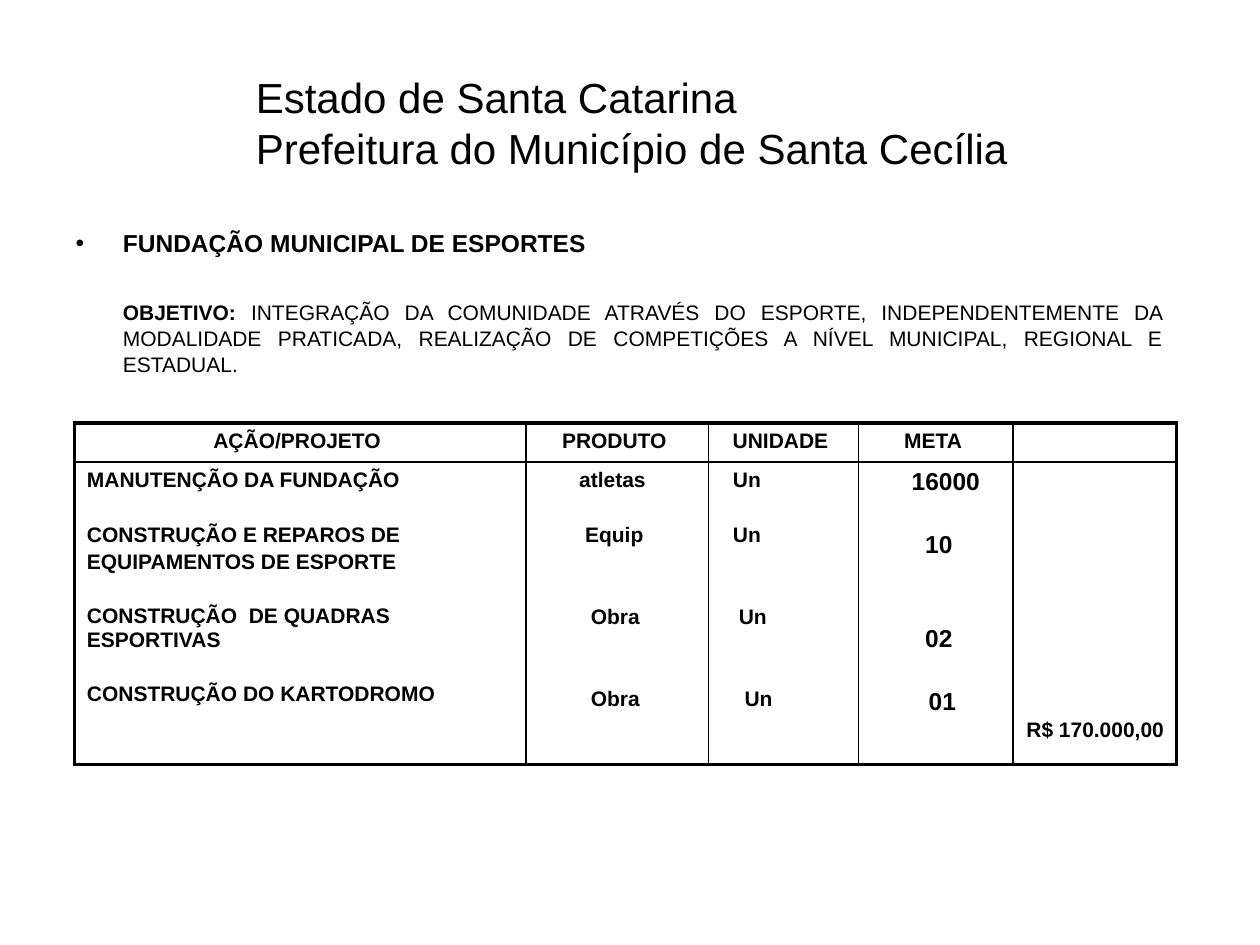
from lxml import etree
from pptx import Presentation
from pptx.dml.color import RGBColor
from pptx.enum.text import MSO_ANCHOR, MSO_AUTO_SIZE, PP_ALIGN
from pptx.oxml.ns import qn
from pptx.util import Pt

LEFT, CENTER, RIGHT, JUSTIFY = PP_ALIGN.LEFT, PP_ALIGN.CENTER, PP_ALIGN.RIGHT, PP_ALIGN.JUSTIFY
TOP, BOTTOM = MSO_ANCHOR.TOP, MSO_ANCHOR.BOTTOM
NO_FIT = MSO_AUTO_SIZE.NONE

THEME = {
    "font": "Arial", "ink": RGBColor(0, 0, 0), "title": 24, "heading": 14, "text": 12,
    "thick": 2.25, "thin": 1, "leading": 1.15, "gap": 2,
}

TITLE = ["Estado de Santa Catarina", "Prefeitura do Município de Santa Cecília"]
HEADING = "FUNDAÇÃO MUNICIPAL DE ESPORTES"
GOAL_LABEL = "OBJETIVO: "
GOAL = ("INTEGRAÇÃO DA COMUNIDADE ATRAVÉS DO ESPORTE, INDEPENDENTEMENTE DA MODALIDADE "
        "PRATICADA, REALIZAÇÃO DE COMPETIÇÕES A NÍVEL MUNICIPAL, REGIONAL E ESTADUAL.")
HEADERS = ["AÇÃO/PROJETO ", "PRODUTO ", "UNIDADE ", "META ", ""]
# Each entry: text, left indent, lines skipped above
ACTIONS = [("MANUTENÇÃO DA FUNDAÇÃO", 0, 0), ("CONSTRUÇÃO E REPAROS DE", 0, 1),
           ("EQUIPAMENTOS DE ESPORTE", 0, 0), ("CONSTRUÇÃO  DE QUADRAS ESPORTIVAS", 0, 1),
           ("CONSTRUÇÃO DO KARTODROMO", 0, 1)]
PRODUCTS = [("atletas", 23.3, 0), ("Equip", 26.7, 1), ("Obra", 30, 2), ("Obra", 30, 2)]
UNITS = [("Un", 6.7, 0), ("Un", 6.7, 1), ("Un", 10, 2), ("Un", 13.3, 2)]
TARGETS = [("16000", 23.3, 0), ("10", 31, 1), ("02", 31, 2), ("01", 33, 1)]
BUDGET = [("R$ 170.000,00", 0, 0)]
COLUMNS = [(ACTIONS, "text", LEFT), (PRODUCTS, "text", LEFT), (UNITS, "text", LEFT),
           (TARGETS, "heading", LEFT), (BUDGET, "text", RIGHT)]

TITLE_BOX = (139, 37.5, 499, 65)
BODY_BOX = (36, 126.7, 636, 356)
TABLE_AT = (42.5, 241.7)
COL_WIDTHS = [258, 104.5, 85.5, 88.5, 93.5]
ROW_HEIGHTS = [22.3, 173]


def place(sp, box):
    sp.left, sp.top, sp.width, sp.height = map(Pt, box)
    tf = sp.text_frame
    tf.word_wrap, tf.auto_size, tf.vertical_anchor = True, NO_FIT, TOP
    return tf


def add_run(p, text, size, bold=False):
    r = p.add_run()
    r.text = text
    r.font.name, r.font.size, r.font.bold = THEME["font"], Pt(THEME[size]), bold
    r.font.color.rgb = THEME["ink"]


def format_paragraph(p, align, before=0, indent=0, hanging=0, bullet=None):
    p.alignment, p.space_before = align, Pt(before)
    pPr = p._p.get_or_add_pPr()
    pPr.set("marL", str(Pt(indent)))
    pPr.set("indent", str(Pt(-hanging)))
    if bullet:
        etree.SubElement(pPr, qn("a:buChar")).set("char", bullet)
    else:
        etree.SubElement(pPr, qn("a:buNone"))


def set_borders(cell, widths):
    tcPr = cell._tc.get_or_add_tcPr()
    for side, width in zip("LRTB", widths):
        ln = etree.SubElement(tcPr, qn(f"a:ln{side}"), w=str(Pt(width)))
        fill = etree.SubElement(ln, qn("a:solidFill"))
        etree.SubElement(fill, qn("a:srgbClr"), val=str(THEME["ink"]))


def fill_cell(cell, entries, size, align):
    tf = cell.text_frame
    for i, (text, indent, skipped) in enumerate(entries):
        p = tf.add_paragraph() if i else tf.paragraphs[0]
        line = THEME[size] * THEME["leading"]
        before = skipped * line + (skipped + 1) * THEME["gap"] if i else 0
        format_paragraph(p, align, round(before, 2), indent)
        if text:
            add_run(p, text, size, True)
        else:
            etree.SubElement(p._p, qn("a:endParaRPr"), sz=str(THEME[size] * 100))


def build_title(s):
    p = place(s.shapes.title, TITLE_BOX).paragraphs[0]
    format_paragraph(p, LEFT)
    for i, line in enumerate(TITLE):
        if i:
            p.add_line_break()
        add_run(p, line, "title")


def build_body(s):
    tf = place(s.placeholders[1], BODY_BOX)
    p = tf.paragraphs[0]
    format_paragraph(p, LEFT, indent=27, hanging=27, bullet="•")
    add_run(p, HEADING, "heading", True)
    p = tf.add_paragraph()
    p.line_spacing = Pt(14.9)
    format_paragraph(p, JUSTIFY, before=23.4, indent=27)
    add_run(p, GOAL_LABEL, "text", True)
    add_run(p, GOAL, "text")


def build_table(s):
    rows, cols = len(ROW_HEIGHTS), len(COL_WIDTHS)
    size = (sum(COL_WIDTHS), sum(ROW_HEIGHTS))
    table = s.shapes.add_table(rows, cols, *map(Pt, TABLE_AT + size)).table
    table.first_row = table.horz_banding = False
    for row, height in zip(table.rows, ROW_HEIGHTS):
        row.height = Pt(height)
    for c, (entries, type_size, align) in enumerate(COLUMNS):
        table.columns[c].width = Pt(COL_WIDTHS[c])
        fill_cell(table.cell(0, c), [(HEADERS[c], 0, 0)], "text", CENTER)
        fill_cell(table.cell(1, c), entries, type_size, align)
        for r in range(rows):
            cell = table.cell(r, c)
            outer = (c == 0, c == cols - 1, r == 0, r == rows - 1)
            set_borders(cell, [THEME["thick" if edge else "thin"] for edge in outer])
            cell.fill.background()
    budget = table.cell(1, cols - 1)
    budget.vertical_anchor, budget.margin_bottom = BOTTOM, Pt(13)


def main():
    prs = Presentation()
    prs.slide_width, prs.slide_height = Pt(720), Pt(540)
    s = prs.slides.add_slide(prs.slide_layouts[1])
    build_body(s)
    build_title(s)
    build_table(s)
    prs.save("out.pptx")


if __name__ == "__main__":
    main()
